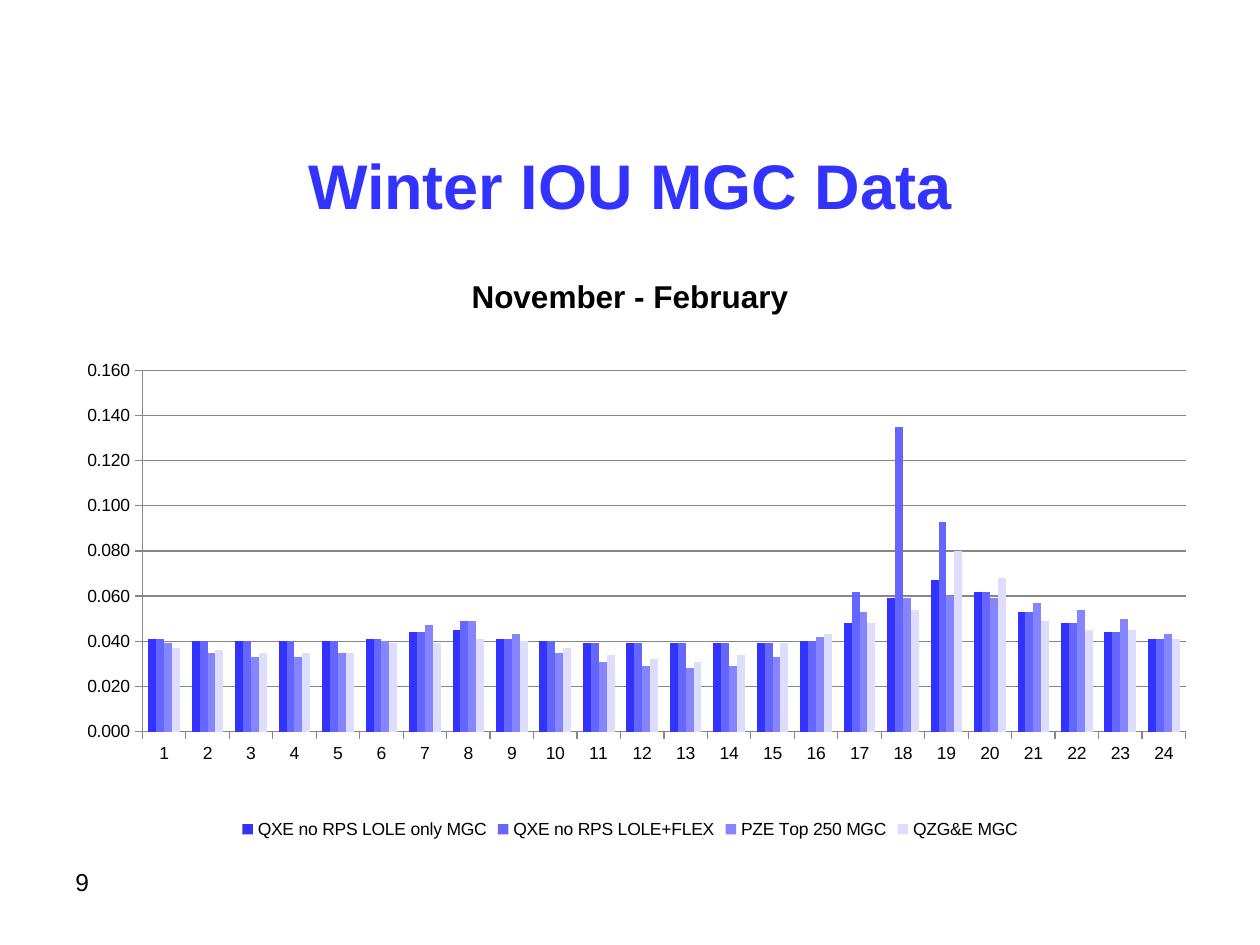
"""Builds the slide of winter hourly cost data, with a clustered column chart."""
import pptx
import pptx.chart.data
import pptx.dml.color
import pptx.enum.chart
import pptx.enum.text
import pptx.oxml
import pptx.util
from pptx.util import Inches

THEME = {
    "face": "Arial", "ink": "000000", "blue": "3333FF", "rule": "868686",
    "head": 36, "sub": 18, "page": 14, "chart": 10,
}
SERIES = [
    ("QXE no RPS LOLE only MGC", "3333FF",
     [0.041, 0.04, 0.04, 0.04, 0.04, 0.041, 0.044, 0.045, 0.041, 0.04, 0.039, 0.039,
      0.039, 0.039, 0.039, 0.04, 0.048, 0.059, 0.067, 0.062, 0.053, 0.048, 0.044, 0.041]),
    ("QXE no RPS LOLE+FLEX", "6565FF",
     [0.041, 0.04, 0.04, 0.04, 0.04, 0.041, 0.044, 0.049, 0.041, 0.04, 0.039, 0.039,
      0.039, 0.039, 0.039, 0.04, 0.062, 0.135, 0.093, 0.062, 0.053, 0.048, 0.044, 0.041]),
    ("PZE Top 250 MGC", "8585FF",
     [0.039, 0.035, 0.033, 0.033, 0.035, 0.04, 0.047, 0.049, 0.043, 0.035, 0.031, 0.029,
      0.028, 0.029, 0.033, 0.042, 0.053, 0.059, 0.06, 0.059, 0.057, 0.054, 0.05, 0.043]),
    ("QZG&E MGC", "DDDDFF",
     [0.037, 0.036, 0.035, 0.035, 0.035, 0.039, 0.039, 0.041, 0.04, 0.037, 0.034, 0.032,
      0.031, 0.034, 0.039, 0.043, 0.048, 0.054, 0.08, 0.068, 0.049, 0.045, 0.045, 0.041]),
]
PLOT = {"x": 0.07, "y": 0.2, "w": 0.92, "h": 0.61}


def style(font, size, color, bold=False):
    font.name = THEME["face"]
    font.size = pptx.util.Pt(THEME[size])
    font.color.rgb = pptx.dml.color.RGBColor.from_string(THEME[color])
    font.bold = bold


deck = pptx.Presentation()
deck.slide_width, deck.slide_height = Inches(10), Inches(7.5)
slide = deck.slides.add_slide(deck.slide_layouts[6])

ALIGN, ANCHOR = pptx.enum.text.PP_ALIGN, pptx.enum.text.MSO_ANCHOR
for text, box, size, color, bold, align, anchor in [
    ("Winter IOU MGC Data", (0.5, 0.92, 9, 1.08), "head", "blue", True,
     ALIGN.CENTER, ANCHOR.MIDDLE),
    ("9", (0.5, 6.83, 1.83, 0.52), "page", "ink", False, ALIGN.LEFT, ANCHOR.TOP),
]:
    frame = slide.shapes.add_textbox(*map(Inches, box)).text_frame
    frame.word_wrap = True
    frame.vertical_anchor = anchor
    para = frame.paragraphs[0]
    para.text = text
    para.alignment = align
    style(para.font, size, color, bold)

data = pptx.chart.data.CategoryChartData(number_format="0.000")
data.categories = [str(hour) for hour in range(1, 25)]
for name, color, values in SERIES:
    data.add_series(name, values)
chart = slide.shapes.add_chart(
    pptx.enum.chart.XL_CHART_TYPE.COLUMN_CLUSTERED,
    *map(Inches, (0.5, 2, 9, 4.7)), data).chart
style(chart.font, "chart", "ink")

chart.has_title = True
title = chart.chart_title.text_frame.paragraphs[0]
title.text = "November - February"
style(title.font, "sub", "ink", True)
chart.chart_title.include_in_layout = False

chart.has_legend = True
chart.legend.position = pptx.enum.chart.XL_LEGEND_POSITION.BOTTOM
chart.legend.include_in_layout = False

plot = chart.plots[0]
plot.gap_width, plot.overlap = 150, 0
plot.vary_by_categories = False
for series, (name, color, values) in zip(plot.series, SERIES):
    series.invert_if_negative = False
    series.format.fill.solid()
    series.format.fill.fore_color.rgb = pptx.dml.color.RGBColor.from_string(color)

hours, costs = chart.category_axis, chart.value_axis
costs.minimum_scale, costs.maximum_scale, costs.major_unit = 0, 0.16, 0.02
costs.has_major_gridlines = True
costs.tick_labels.number_format = "0.000"
costs.tick_labels.number_format_is_linked = False
for axis in (hours, costs):
    axis.major_tick_mark = pptx.enum.chart.XL_TICK_MARK.OUTSIDE
    axis.minor_tick_mark = pptx.enum.chart.XL_TICK_MARK.NONE
for line in (hours.format.line, costs.format.line, costs.major_gridlines.format.line):
    line.width = pptx.util.Pt(0.75)
    line.color.rgb = pptx.dml.color.RGBColor.from_string(THEME["rule"])

modes = '<c:layoutTarget val="inner"/><c:xMode val="edge"/><c:yMode val="edge"/>'
sizes = "".join(f'<c:{side} val="{part}"/>' for side, part in PLOT.items())
space = "http://schemas.openxmlformats.org/drawingml/2006/chart"
layout = pptx.oxml.parse_xml(
    f'<c:layout xmlns:c="{space}"><c:manualLayout>{modes}{sizes}</c:manualLayout></c:layout>')
area = chart.element.find(f".//{{{space}}}plotArea")
for old in area.findall(f"{{{space}}}layout"):
    area.remove(old)
area.insert(0, layout)

deck.save("out.pptx")
